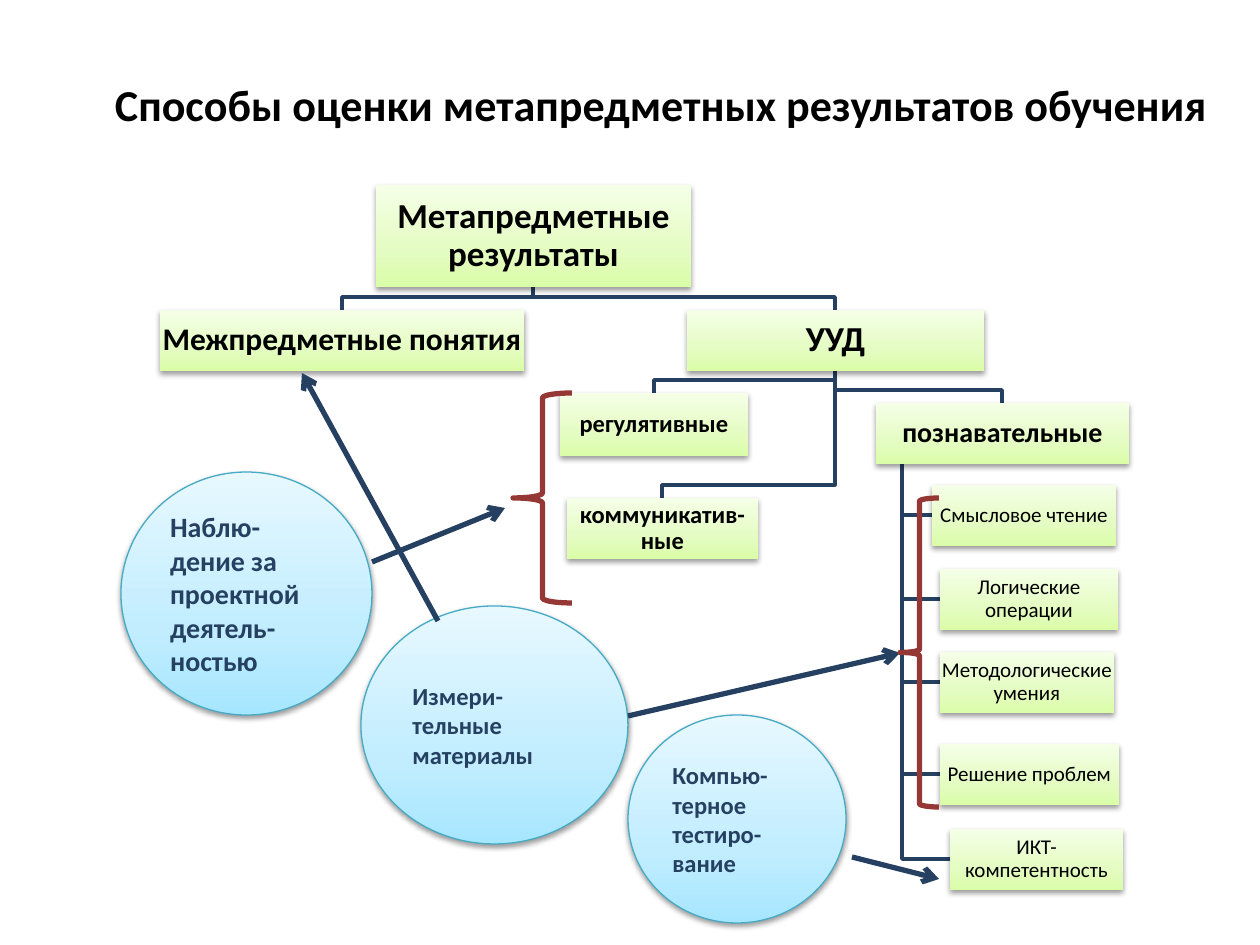
"""Build a slide on ways of assessing meta-subject learning results."""
from copy import deepcopy
from dataclasses import dataclass

from lxml.etree import SubElement
from pptx import Presentation
from pptx.dml.color import RGBColor
from pptx.enum.shapes import MSO_CONNECTOR, MSO_SHAPE
from pptx.enum.text import MSO_ANCHOR, PP_ALIGN
from pptx.oxml.ns import qn
from pptx.util import Pt

PX = 914400 / 126
SLIDE_SIZE = (1260, 945)


@dataclass(frozen=True)
class Theme:
    font: str = "Calibri"
    black: str = "000000"
    navy: str = "254061"
    red: str = "953735"
    teal: str = "46AAC5"
    green: tuple = ("DAFDA7", "E4FCC2", "F5FFE7")
    blue: tuple = ("A7E6FF", "C1EDFF", "E7F8FF")
    stops: tuple = (0, 0.35, 1)
    title_size: float = 25.2
    leaf_size: int = 12
    outline: float = 0.75
    tree_line: int = 2
    arrow_line: int = 3


THEME = Theme()
TITLE = ("Способы оценки метапредметных результатов обучения", (94, 40, 1134, 128))

BRANCHES = {
    "results": ("Метапредметные результаты", 20, (376, 185, 315, 102)),
    "concepts": ("Межпредметные понятия", 18, (160, 310, 364, 61)),
    "actions": ("УУД", 20, (687, 310, 297, 61)),
    "regulative": ("регулятивные", 14, (560, 393, 188, 63)),
    "communicative": ("коммуникатив-ные", 14, (567, 498, 191, 61)),
    "cognitive": ("познавательные", 16, (876, 403, 253, 61)),
}
LINKS = [
    ("results", "concepts"), ("results", "actions"),
    ("actions", "regulative"), ("actions", "communicative"), ("actions", "cognitive"),
]
LEAVES = [
    ("Смысловое чтение", (932, 485, 184, 61)),
    ("Логические операции", (940, 569, 178, 61)),
    ("Методологические умения", (940, 652, 174, 61)),
    ("Решение проблем", (940, 744, 179, 61)),
    ("ИКТ-компетентность", (950, 829, 173, 61)),
]
METHODS = [
    ("Наблю-дение за проектной деятель-ностью", 16, (121, 472, 251, 243)),
    ("Измери-тельные материалы", 14, (361, 606, 267, 238)),
    ("Компью-терное тестиро-вание", 14, (628, 715, 218, 208)),
]
ARROWS = [
    ((438, 621), (302, 373)), ((628, 716), (900, 653)),
    ((372, 562), (505, 508)), ((852, 857), (939, 879)),
]
BRACES = [(513, 393, 59, 210), (900, 498, 39, 309)]
BUS_GAP = 13
LEAF_TRUNK = 26


def emu(*lengths):
    return [round(length * PX) for length in lengths]


def color(value):
    return RGBColor.from_string(value)


def write(shape, text, size, ink, bold=True, align=PP_ALIGN.LEFT):
    frame = shape.text_frame
    frame.word_wrap = True
    frame.vertical_anchor = MSO_ANCHOR.MIDDLE
    paragraph = frame.paragraphs[0]
    paragraph.alignment = align
    run = paragraph.add_run()
    run.text = text
    run.font.name = THEME.font
    run.font.size = Pt(size)
    run.font.bold = bold
    run.font.color.rgb = color(ink)
    return paragraph


def set_insets(shape, inset):
    frame = shape.text_frame
    frame.margin_left = frame.margin_right = frame.margin_top = frame.margin_bottom = inset


def stroke(shape, ink, width):
    shape.line.color.rgb = color(ink)
    shape.line.width = Pt(width)


def add_glossy(slide, kind, place, colors):
    shape = slide.shapes.add_shape(kind, *emu(*place))
    shape.fill.gradient()
    shape.fill.gradient_angle = 90
    stop_list = shape._element.spPr.find(qn("a:gradFill")).find(qn("a:gsLst"))
    stop_list.append(deepcopy(stop_list[0]))
    for stop, position, value in zip(shape.fill.gradient_stops, THEME.stops, colors):
        stop.position = position
        stop.color.rgb = color(value)
    shape.line.fill.background()
    shape.shadow.inherit = False
    effects = shape._element.spPr.find(qn("a:effectLst"))
    shadow = SubElement(effects, qn("a:outerShdw"), blurRad="40000", dist="20000",
                        dir="5400000", rotWithShape="0")
    ink = SubElement(shadow, qn("a:srgbClr"), val=THEME.black)
    SubElement(ink, qn("a:alpha"), val="38000")
    return shape


def add_box(slide, text, size, place, bold=True):
    box = add_glossy(slide, MSO_SHAPE.RECTANGLE, place, THEME.green)
    set_insets(box, Pt(0.8))
    paragraph = write(box, text, size, THEME.black, bold, PP_ALIGN.CENTER)
    paragraph.line_spacing = 0.9


def add_tree_line(slide, points):
    builder = slide.shapes.build_freeform(*points[0], scale=PX)
    builder.add_line_segments(points[1:], close=False)
    shape = builder.convert_to_shape()
    shape.fill.background()
    shape.shadow.inherit = False
    stroke(shape, THEME.navy, THEME.tree_line)


def add_tree(slide):
    left, top, _, height = BRANCHES["cognitive"][2]
    trunk = left + LEAF_TRUNK
    for _, (leaf_left, leaf_top, _, leaf_height) in LEAVES:
        middle = leaf_top + leaf_height // 2
        add_tree_line(slide, [(trunk, top + height), (trunk, middle), (leaf_left, middle)])
    for parent, child in LINKS:
        left, top, width, height = BRANCHES[parent][2]
        child_left, child_top, child_width, _ = BRANCHES[child][2]
        start, end = left + width // 2, child_left + child_width // 2
        bus = child_top - BUS_GAP
        add_tree_line(slide, [(start, top + height), (start, bus), (end, bus), (end, child_top)])
    for text, size, place in BRANCHES.values():
        add_box(slide, text, size, place)
    for text, place in LEAVES:
        add_box(slide, text, THEME.leaf_size, place, bold=False)


def add_arrow(slide, start, end):
    arrow = slide.shapes.add_connector(MSO_CONNECTOR.STRAIGHT, *emu(*start, *end))
    stroke(arrow, THEME.navy, THEME.arrow_line)
    SubElement(arrow.line._get_or_add_ln(), qn("a:tailEnd"), type="arrow")
    SubElement(arrow._element.spPr, qn("a:effectLst"))


def main():
    presentation = Presentation()
    presentation.slide_width, presentation.slide_height = emu(*SLIDE_SIZE)
    slide = presentation.slides.add_slide(presentation.slide_layouts[5])
    text, place = TITLE
    title = slide.shapes.title
    title.left, title.top, title.width, title.height = emu(*place)
    set_insets(title, 0)
    write(title, text, THEME.title_size, THEME.black, align=PP_ALIGN.CENTER)
    add_tree(slide)
    for text, size, place in METHODS:
        circle = add_glossy(slide, MSO_SHAPE.OVAL, place, THEME.blue)
        stroke(circle, THEME.teal, THEME.outline)
        write(circle, text, size, THEME.navy)
    for start, end in ARROWS:
        add_arrow(slide, start, end)
    for place in BRACES:
        brace = slide.shapes.add_shape(MSO_SHAPE.LEFT_BRACE, *emu(*place))
        brace.fill.background()
        brace.shadow.inherit = False
        stroke(brace, THEME.red, THEME.arrow_line)
    presentation.save("out.pptx")


if __name__ == "__main__":
    main()
